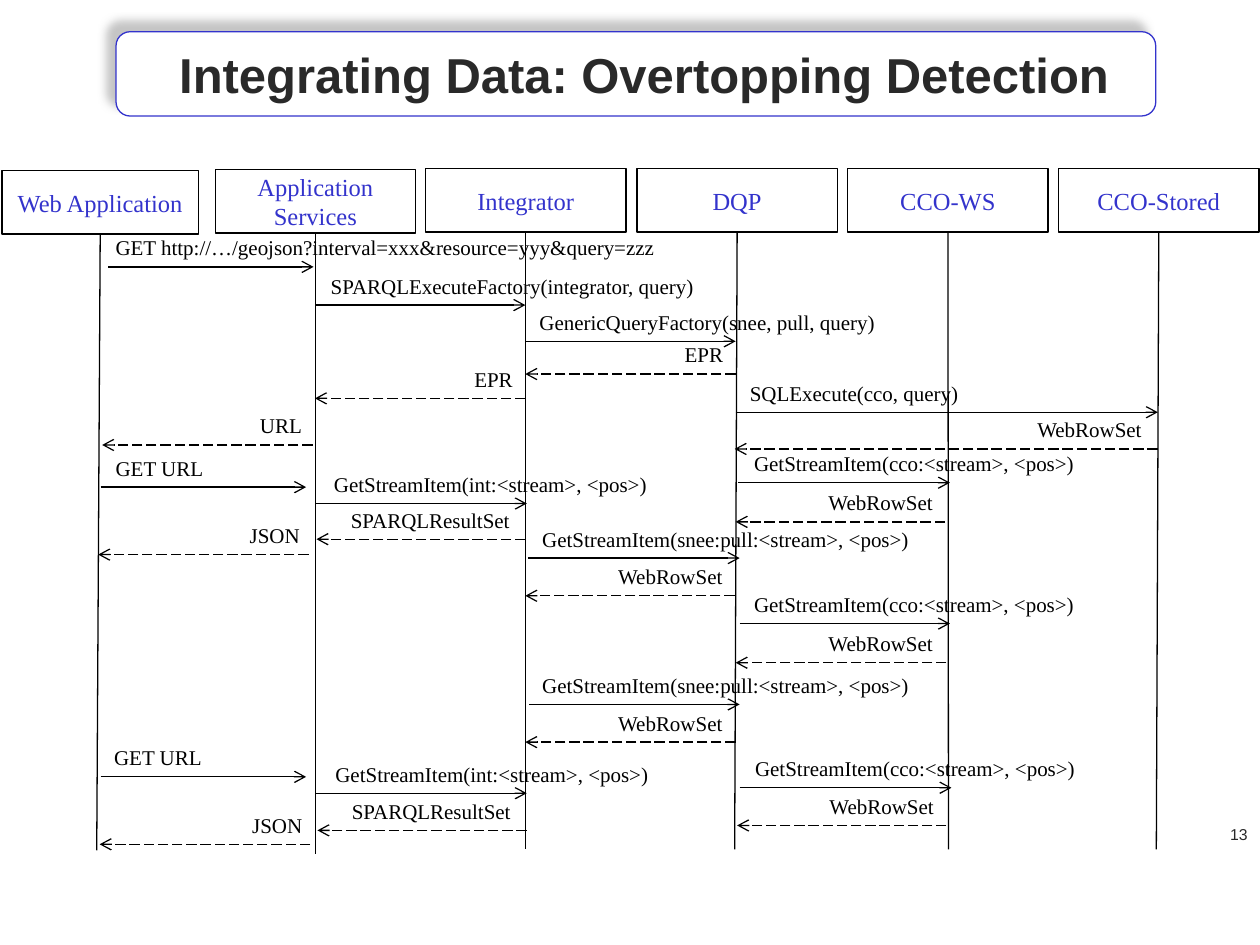
"""Build the sequence diagram slide on overtopping detection."""
from lxml import etree
from pptx import Presentation
from pptx.dml import color
from pptx.enum import dml, shapes, text
from pptx.oxml import ns
from pptx.util import Cm, Pt

SERIF = "Times New Roman"
INK, BLUE, DARK, WHITE = "000000", "3333CC", "292929", "FFFFFF"

# name, left, top, width, lifeline end x, lifeline end y
LANES = [
    ("Web Application", 0.04, 3.44, 3.96, 1.95, 17.14),
    ("Application Services", 4.34, 3.42, 4.04, 6.36, 17.22),
    ("Integrator", 8.58, 3.4, 4.04, 10.6, 17.12),
    ("DQP", 12.84, 3.4, 4.04, 14.81, 17.12),
    ("CCO-WS", 17.09, 3.4, 4.04, 19.12, 17.12),
    ("CCO-Stored", 21.34, 3.4, 4.04, 23.31, 17.12),
]

HTTP_GET = "GET http://…/geojson?interval=xxx&resource=yyy&query=zzz"
EXECUTE = "SPARQLExecuteFactory(integrator, query)"
GENERIC = "GenericQueryFactory(snee, pull, query)"
SQL = "SQLExecute(cco, query)"
INT_ITEM = "GetStreamItem(int:<stream>, <pos>)"
CCO_ITEM = "GetStreamItem(cco:<stream>, <pos>)"
SNEE_ITEM = "GetStreamItem(snee:pull:<stream>, <pos>)"
RESULT, ROWS = "SPARQLResultSet", "WebRowSet"

LABEL_WIDTHS = {
    HTTP_GET: 12.65, EXECUTE: 7.9, GENERIC: 7.34, SQL: 4.78, INT_ITEM: 6.88,
    CCO_ITEM: 7.04, SNEE_ITEM: 7.98, RESULT: 3.89, ROWS: 2.69,
    "EPR": 1.3, "URL": 1.37, "JSON": 1.52, "GET URL": 2.31,
}

# label, label left, start x, end x, y
MESSAGES = [
    (HTTP_GET, 2.08, 2.18, 6.32, 5.38),
    (EXECUTE, 6.38, 6.35, 10.59, 6.15),
    (GENERIC, 10.59, 10.59, 14.83, 6.88),
    ("EPR", 13.54, 14.83, 10.59, 7.54),
    ("EPR", 9.3, 10.59, 6.35, 8.03),
    ("URL", 4.98, 6.3, 2.06, 8.97),
    ("JSON", 4.78, 6.22, 1.98, 11.18),
    ("GET URL", 2.06, 2.03, 6.17, 9.82),
    (RESULT, 6.73, 10.59, 6.38, 10.87),
    (INT_ITEM, 6.45, 6.38, 10.62, 10.15),
    (ROWS, 20.62, 23.34, 14.81, 9.05),
    (SQL, 14.83, 14.83, 23.34, 8.31),
    (CCO_ITEM, 14.91, 14.88, 19.15, 9.73),
    (ROWS, 16.41, 19.05, 14.83, 10.52),
    (SNEE_ITEM, 10.64, 10.64, 14.91, 11.25),
    (ROWS, 12.17, 14.81, 10.59, 12.01),
    (CCO_ITEM, 14.91, 14.91, 19.15, 12.57),
    (ROWS, 16.41, 19.08, 14.83, 13.36),
    (SNEE_ITEM, 10.64, 10.67, 14.91, 14.2),
    (ROWS, 12.17, 14.83, 10.59, 14.96),
    (CCO_ITEM, 14.93, 14.91, 19.18, 15.88),
    (ROWS, 16.43, 19.08, 14.86, 16.64),
    ("JSON", 4.83, 6.25, 2.01, 17.02),
    ("GET URL", 2.03, 2.03, 6.17, 15.66),
    (RESULT, 6.75, 10.62, 6.4, 16.74),
    (INT_ITEM, 6.48, 6.38, 10.62, 15.99),
]


def rgb(value):
    return color.RGBColor.from_string(value)


def child(parent, tag, **attrs):
    return etree.SubElement(parent, ns.qn(tag), attrs)


def write(sp, words, size, font, hue, align, bold=False):
    p = sp.text_frame.paragraphs[0]
    p.alignment = align
    r = p.add_run()
    r.text = words
    r.font.size, r.font.name, r.font.bold = Pt(size), font, bold
    r.font.color.rgb = rgb(hue)


def add_text(s, words, box, size, font, hue, align=text.PP_ALIGN.CENTER,
             bold=False, wrap=True, anchor=text.MSO_ANCHOR.TOP):
    sp = s.shapes.add_textbox(*map(Cm, box))
    sp.text_frame.word_wrap = wrap
    sp.text_frame.vertical_anchor = anchor
    write(sp, words, size, font, hue, align, bold)


def add_box(s, kind, box, outline):
    sp = s.shapes.add_shape(kind, *map(Cm, box))
    sp.shadow.inherit = False
    sp.fill.solid()
    sp.fill.fore_color.rgb = rgb(WHITE)
    sp.line.color.rgb = rgb(outline)
    sp.line.width = Pt(0.75)
    return sp


def add_line(s, x1, y1, x2, y2):
    cx = s.shapes.add_connector(shapes.MSO_CONNECTOR.STRAIGHT,
                                Cm(x1), Cm(y1), Cm(x2), Cm(y2))
    cx.line.color.rgb = rgb(INK)
    cx.line.width = Pt(0.75)
    child(cx._element.spPr, "a:effectLst")
    return cx


def add_title(s):
    sp = add_box(s, shapes.MSO_SHAPE.ROUNDED_RECTANGLE,
                 (2.34, 0.64, 20.96, 1.7), BLUE)
    effects = sp._element.spPr.find(ns.qn("a:effectLst"))
    shadow = child(effects, "a:outerShdw", blurRad=str(Pt(5)),
                   dist=str(Pt(8.5)), dir="13500000", algn="ctr",
                   rotWithShape="0")
    hue = child(shadow, "a:srgbClr", val="B2B2B2")
    child(hue, "a:alpha", val="75000")
    add_text(s, "Integrating Data: Overtopping Detection",
             (1.96, 0.64, 22.05, 1.7), 28, "Arial", DARK, bold=True,
             anchor=text.MSO_ANCHOR.MIDDLE)


def add_lane(s, name, left, top, width, end_x, end_y):
    sp = add_box(s, shapes.MSO_SHAPE.RECTANGLE, (left, top, width, 1.28), INK)
    tf = sp.text_frame
    tf.word_wrap = True
    tf.vertical_anchor = text.MSO_ANCHOR.MIDDLE
    tf.margin_left = tf.margin_right = Cm(0.2)
    tf.margin_top = tf.margin_bottom = 0
    write(sp, name, 14, SERIF, BLUE, text.PP_ALIGN.CENTER)
    cx = add_line(s, left + width / 2, top + 1.28, end_x, end_y)
    cx.begin_connect(sp, 2)


def add_message(s, label, left, x1, x2, y):
    cx = add_line(s, x1, y, x2, y)
    if x2 < x1:
        cx.line.dash_style = dml.MSO_LINE.LONG_DASH
    child(cx.line._get_or_add_ln(), "a:tailEnd", type="arrow")
    first = label == HTTP_GET
    align = text.PP_ALIGN.LEFT if first else text.PP_ALIGN.CENTER
    add_text(s, label, (left, y - 0.77, LABEL_WIDTHS[label], 0.76),
             12, SERIF, INK, align, wrap=first)


def main():
    prs = Presentation()
    prs.slide_width, prs.slide_height = Cm(25.4), Cm(19.05)
    s = prs.slides.add_slide(prs.slide_layouts[6])
    add_title(s)
    for lane in LANES:
        add_lane(s, *lane)
    for message in MESSAGES:
        add_message(s, *message)
    add_text(s, "13", (20.12, 16.51, 5.28, 0.64), 9, "Arial", DARK,
             text.PP_ALIGN.RIGHT)
    prs.save("out.pptx")


if __name__ == "__main__":
    main()
